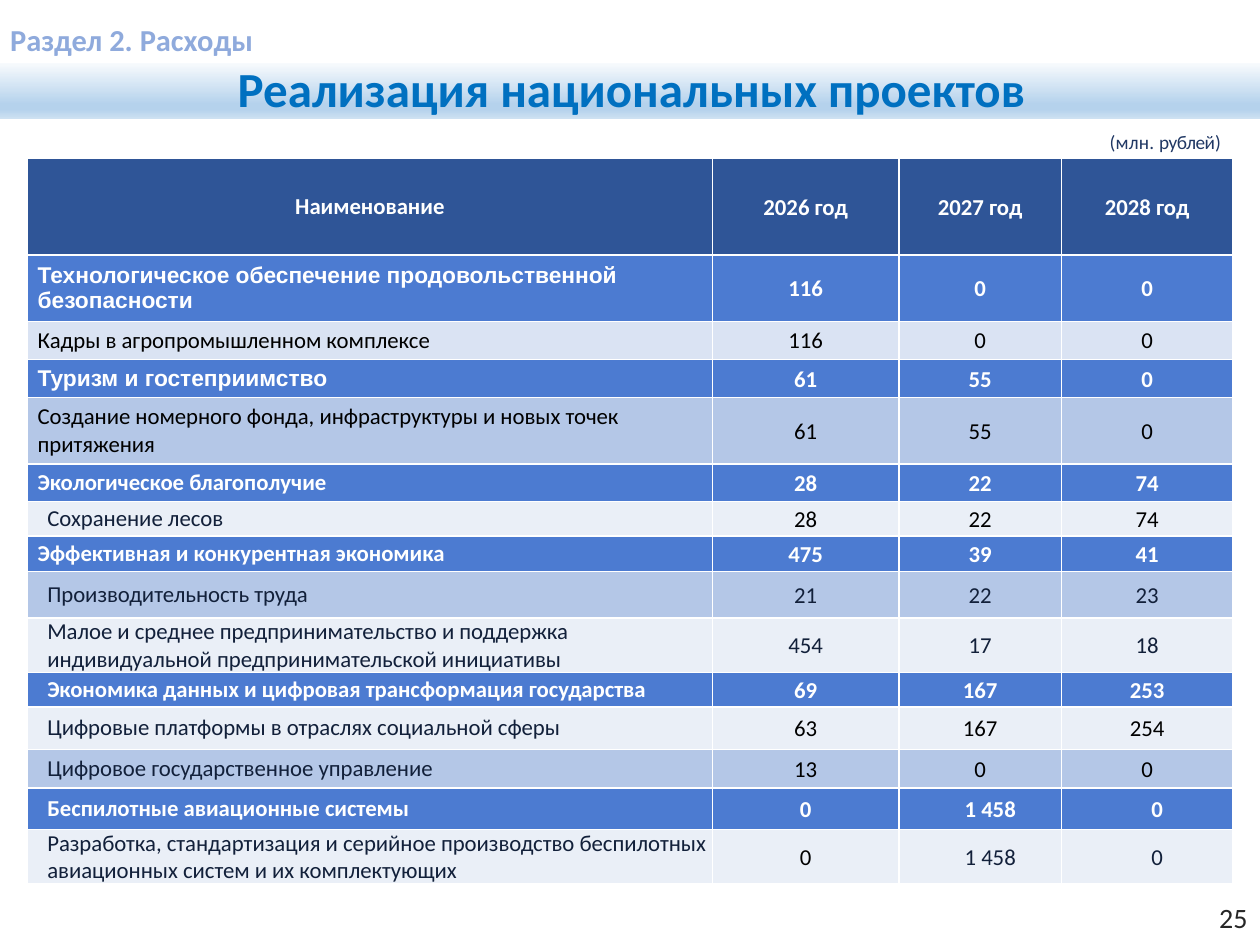
from dataclasses import dataclass

from lxml.etree import SubElement
from pptx import Presentation
from pptx.dml.color import RGBColor
from pptx.enum.shapes import MSO_SHAPE
from pptx.enum.text import MSO_ANCHOR, MSO_AUTO_SIZE, PP_ALIGN
from pptx.oxml.ns import qn
from pptx.util import Pt


@dataclass(frozen=True)
class Theme:
    font: str = "Calibri"
    alternate_font: str = "Arial"
    white: str = "FFFFFF"
    black: str = "000000"
    ink: str = "12203A"
    header: str = "2F5597"
    project: str = "4C7BD1"
    pale: str = "DAE3F3"
    medium: str = "B4C7E7"
    light: str = "EAEFF7"
    title: str = "0070C0"
    section: str = "8FAADC"
    units: str = "203864"
    page_number: str = "262626"
    band: tuple = ((0, "F7FAFD"), (74, "B5D2EC"), (83, "B5D2EC"), (100, "CEE1F2"))
    section_size: float = 30
    title_size: float = 28
    number_size: float = 16
    table_size: float = 13
    units_size: float = 11


THEME = Theme()


@dataclass(frozen=True)
class Style:
    size: float
    color: str
    bold: bool = False
    align: PP_ALIGN = PP_ALIGN.LEFT
    font: str = THEME.font
    indent: float = 0


@dataclass(frozen=True)
class Row:
    height: float
    label: str
    values: tuple
    fill: str = THEME.project
    label_color: str = THEME.white
    value_color: str = THEME.white
    indent: float = 6
    label_font: str = THEME.font
    value_indents: tuple = (0, 0, 0)

    @property
    def bold(self) -> bool:
        return self.fill in (THEME.header, THEME.project)


INDENT = 11.5
SHIFTED = (0, INDENT, INDENT)
COLUMN_WIDTHS = (391.6, 106.6, 92.8, 98)
BLACK = dict(label_color=THEME.black, value_color=THEME.black)
INK = dict(label_color=THEME.ink, value_color=THEME.ink, indent=INDENT)
MIXED = dict(label_color=THEME.ink, value_color=THEME.black, indent=INDENT)

ROWS = (
    Row(55.2, "Наименование", ("2026 год", "2027 год", "2028 год"), THEME.header, indent=0),
    Row(38, "Технологическое обеспечение продовольственной безопасности",
        ("116", "0", "0"), label_font=THEME.alternate_font),
    Row(21.8, "Кадры в агропромышленном комплексе", ("116", "0", "0"), THEME.pale, **BLACK),
    Row(21.8, "Туризм и гостеприимство", ("61", "55", "0"), label_font=THEME.alternate_font),
    Row(38, "Создание номерного фонда, инфраструктуры и новых точек притяжения",
        ("61", "55", "0"), THEME.medium, **BLACK),
    Row(21.4, "Экологическое благополучие", ("28", "22", "74")),
    Row(19.7, "Сохранение лесов", ("28", "22", "74"), THEME.light, **MIXED),
    Row(20.4, "Эффективная и конкурентная экономика", ("475", "39", "41")),
    Row(26.4, "Производительность труда", ("21", "22", "23"), THEME.medium, **INK),
    Row(29.5, "Малое и среднее предпринимательство и поддержка "
        "индивидуальной предпринимательской инициативы",
        ("454", "17", "18"), THEME.light, **INK),
    Row(19.7, "Экономика данных и цифровая трансформация государства",
        ("69", "167", "253"), indent=INDENT),
    Row(24.2, "Цифровые платформы в отраслях социальной сферы",
        ("63", "167", "254"), THEME.light, **MIXED),
    Row(22.2, "Цифровое государственное управление", ("13", "0", "0"), THEME.medium, **MIXED),
    Row(23.6, "Беспилотные авиационные системы", ("0", "1 458", "0"),
        indent=INDENT, value_indents=SHIFTED),
    Row(29.5, "Разработка, стандартизация и серийное производство беспилотных "
        "авиационных систем и их комплектующих",
        ("0", "1 458", "0"), THEME.light, value_indents=SHIFTED, **MIXED),
)


def write(paragraph, text: str, style: Style) -> None:
    paragraph.add_run().text = text
    paragraph.alignment = style.align
    if style.indent:
        properties = paragraph._p.get_or_add_pPr()
        properties.set("marL", str(Pt(style.indent)))
        properties.set("indent", "0")
    font = paragraph.font
    font.name, font.size, font.bold = style.font, Pt(style.size), style.bold
    font.color.rgb = RGBColor.from_string(style.color)


def set_margins(target, left: float, top: float, right: float, bottom: float) -> None:
    target.margin_left, target.margin_top = Pt(left), Pt(top)
    target.margin_right, target.margin_bottom = Pt(right), Pt(bottom)


def add_text(page, frame: tuple, text: str, style: Style, margins: tuple):
    box = page.shapes.add_textbox(*map(Pt, frame))
    box.text_frame.word_wrap = True
    box.text_frame.auto_size = MSO_AUTO_SIZE.SHAPE_TO_FIT_TEXT
    set_margins(box.text_frame, *margins)
    paragraph = box.text_frame.paragraphs[0]
    write(paragraph, text, style)
    return paragraph


def add_title_band(page) -> None:
    band = page.shapes.add_shape(MSO_SHAPE.RECTANGLE, 0, Pt(36), Pt(720), Pt(32))
    band.shadow.inherit = False
    band.line.fill.background()
    band.fill.gradient()
    band.fill.gradient_angle = 270
    stops = band._element.spPr.find(".//" + qn("a:gsLst"))
    stops.clear()
    for position, color in THEME.band:
        stop = SubElement(stops, qn("a:gs"), pos=str(position * 1000))
        SubElement(stop, qn("a:srgbClr"), val=color)
    frame = band.text_frame
    frame.word_wrap = True
    frame.vertical_anchor = MSO_ANCHOR.TOP
    frame.auto_size = MSO_AUTO_SIZE.SHAPE_TO_FIT_TEXT
    set_margins(frame, 0, 1.4, 0, 0)
    paragraph = frame.paragraphs[0]
    paragraph.line_spacing = 0.9
    write(paragraph, "Реализация национальных проектов",
          Style(THEME.title_size, THEME.title, True, PP_ALIGN.CENTER, indent=1.4))


def fill_cell(cell, text: str, style: Style, fill: str, margins: tuple) -> None:
    properties = cell._tc.get_or_add_tcPr()
    for side in ("a:lnL", "a:lnR", "a:lnT", "a:lnB"):
        line = SubElement(properties, qn(side), w=str(Pt(1)))
        SubElement(SubElement(line, qn("a:solidFill")), qn("a:srgbClr"), val=THEME.white)
    cell.fill.solid()
    cell.fill.fore_color.rgb = RGBColor.from_string(fill)
    cell.vertical_anchor = MSO_ANCHOR.MIDDLE
    set_margins(cell, *margins)
    write(cell.text_frame.paragraphs[0], text, style)


def add_projects_table(page) -> None:
    height = sum(row.height for row in ROWS)
    table = page.shapes.add_table(len(ROWS), len(COLUMN_WIDTHS), Pt(15.5), Pt(90.5),
                                  Pt(sum(COLUMN_WIDTHS)), Pt(height)).table
    for column, width in zip(table.columns, COLUMN_WIDTHS):
        column.width = Pt(width)
    for index, row in enumerate(ROWS):
        table.rows[index].height = Pt(row.height)
        align = PP_ALIGN.LEFT if index else PP_ALIGN.CENTER
        label_style = Style(THEME.table_size, row.label_color, row.bold, align,
                            row.label_font, row.indent)
        fill_cell(table.cell(index, 0), row.label, label_style, row.fill, (0, 0, 0, 0))
        for column, (value, indent) in enumerate(zip(row.values, row.value_indents), 1):
            color = row.label_color if indent else row.value_color
            style = Style(THEME.table_size, color, row.bold, PP_ALIGN.CENTER, indent=indent)
            fill_cell(table.cell(index, column), value, style, row.fill, (0.7, 0.7, 0.7, 0))


def add_units(page) -> None:
    style = Style(THEME.units_size, THEME.units, align=PP_ALIGN.RIGHT)
    paragraph = add_text(page, (519.8, 70.6, 185, 20.9), "(млн. ", style, (7.2, 3.6, 7.2, 3.6))
    for text in ("рублей", ")"):
        paragraph.add_run().text = text
    for span, spacing in zip(paragraph.runs, (10, -30, 10)):
        span.font._element.set("spc", str(spacing))


def add_section(page) -> None:
    style = Style(THEME.section_size, THEME.section, True, PP_ALIGN.JUSTIFY, indent=5.8)
    paragraph = add_text(page, (0, 2.9, 720, 33.8), "Раздел 2. Расходы", style, (0, 1.4, 0, 0))
    paragraph.line_spacing = 0.9
    paragraph.runs[0].font._element.set("baseline", "3000")


def main() -> None:
    deck = Presentation()
    deck.slide_width, deck.slide_height = Pt(720), Pt(540)
    page = deck.slides.add_slide(deck.slide_layouts[6])
    add_text(page, (533.5, 514.8, 179.3, 19.4), "25",
             Style(THEME.number_size, THEME.page_number, align=PP_ALIGN.RIGHT), (0, 0, 0, 0))
    add_units(page)
    add_title_band(page)
    add_section(page)
    add_projects_table(page)
    deck.save("out.pptx")


if __name__ == "__main__":
    main()
